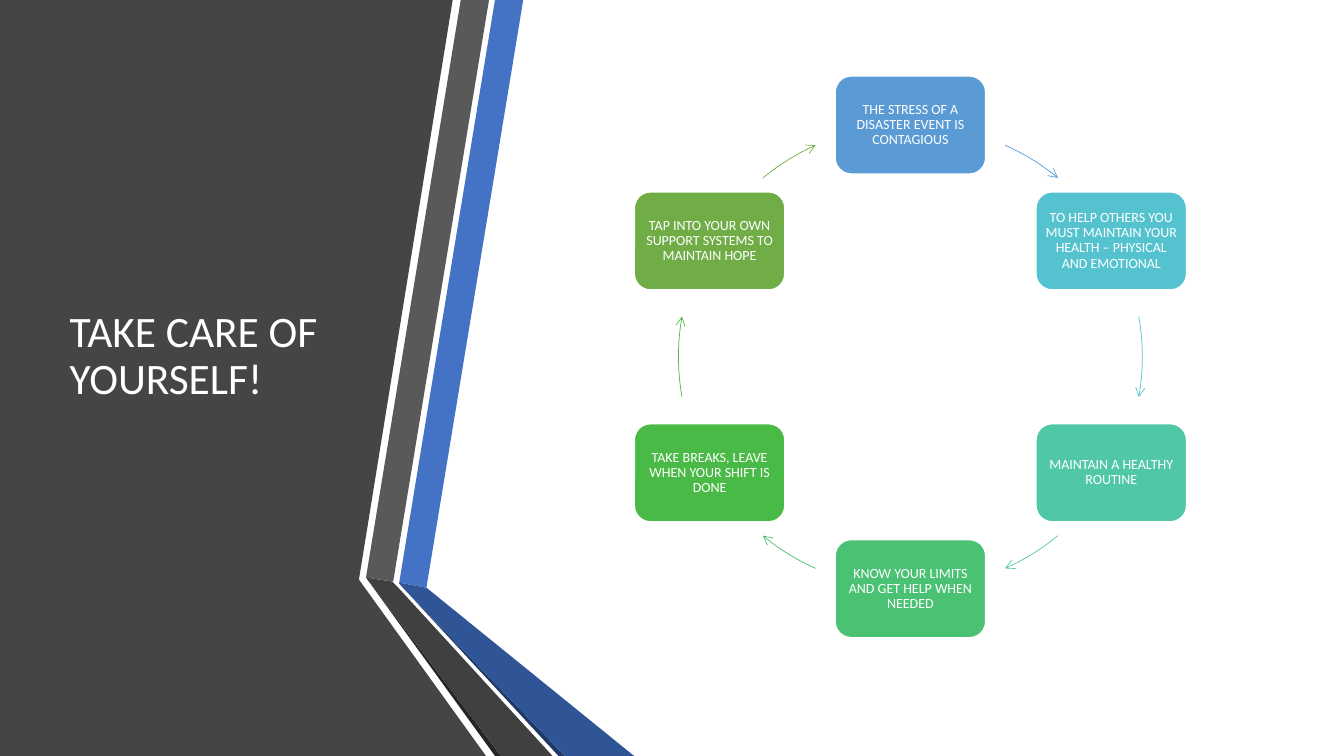
import math
from pptx import Presentation
from pptx import util as u
from pptx.dml.color import RGBColor
from pptx.enum import shapes, text
from pptx.oxml import parse_xml
from pptx.oxml.ns import nsdecls

TITLE = "TAKE CARE OF YOURSELF!"
WHITE = "FFFFFF"

# Fill, then corner points in inches
RIBBONS = [
    ("454545", [(0, 0), (4.49, 0), (3.56, 5.75), (4.82, 7.5), (0, 7.5)]),
    ("4472C4", [(3.96, 5.78), (4.23, 5.83), (5.19, 0), (4.91, 0)]),
    ("595959", [(4.85, 0), (4.57, 0), (3.63, 5.73), (3.9, 5.77)]),
    ("262626", [(3.63, 5.73), (4.91, 7.5), (4.97, 7.5)]),
    ("203864", [(3.96, 5.79), (5.54, 7.5), (5.6, 7.5)]),
    ("2F5597", [(3.96, 5.79), (5.6, 7.5), (6.29, 7.5), (4.23, 5.83), (3.96, 5.78)]),
    ("404040", [(5.48, 7.5), (3.95, 5.83), (3.89, 5.77), (3.63, 5.73), (4.97, 7.5)]),
]

# Text, colour, then start and end angle of the arrow that follows (clockwise from 3 o'clock)
STEPS = [
    ("THE STRESS OF A DISASTER EVENT IS CONTAGIOUS", "5B9BD5", 294.1, 309.5),
    ("TO HELP OTHERS YOU MUST MAINTAIN YOUR HEALTH – PHYSICAL AND EMOTIONAL",
     "55C3CF", 350, 10),
    ("MAINTAIN A HEALTHY ROUTINE", "50C8A7", 50.5, 65.9),
    ("KNOW YOUR LIMITS AND GET HELP WHEN NEEDED", "4BC174", 114.1, 129.5),
    ("TAKE BREAKS, LEAVE WHEN YOUR SHIFT IS DONE", "4ABA46", 170, 190),
    ("TAP INTO YOUR OWN SUPPORT SYSTEMS TO MAINTAIN HOPE", "70AD47", 230.5, 245.9),
]
CENTER_X, CENTER_Y, RADIUS = 9.03, 3.54, 2.3
BOX_W, BOX_H = 1.5, 0.98


def rgb(value):
    return RGBColor.from_string(value)


def inches(*values):
    return [u.Inches(v) for v in values]


def write(sp, words, size, align, inset_x, inset_y, color=WHITE, font="Calibri"):
    tf = sp.text_frame
    tf.word_wrap = True
    tf.auto_size = text.MSO_AUTO_SIZE.NONE
    tf.vertical_anchor = text.MSO_ANCHOR.MIDDLE
    tf.margin_left = tf.margin_right = u.Inches(inset_x)
    tf.margin_top = tf.margin_bottom = u.Inches(inset_y)
    p = tf.paragraphs[0]
    p.alignment = align
    p.line_spacing = 0.9
    r = p.add_run()
    r.text = words
    r.font.size = u.Pt(size)
    r.font.name = font
    r.font.color.rgb = rgb(color)


def add_ribbon(s, color, points):
    corners = [inches(*point) for point in points]
    builder = s.shapes.build_freeform(*corners[0])
    builder.add_line_segments(corners[1:], close=True)
    sp = builder.convert_to_shape()
    sp.shadow.inherit = False
    sp.fill.solid()
    sp.fill.fore_color.rgb = rgb(color)
    sp.line.fill.background()


def add_box(s, words, color, angle):
    left = CENTER_X + RADIUS * math.cos(angle) - BOX_W / 2
    top = CENTER_Y + RADIUS * math.sin(angle) - BOX_H / 2
    sp = s.shapes.add_shape(shapes.MSO_SHAPE.ROUNDED_RECTANGLE,
                            *inches(left, top, BOX_W, BOX_H))
    sp.shadow.inherit = False
    sp.fill.solid()
    sp.fill.fore_color.rgb = rgb(color)
    sp.line.color.rgb = rgb(WHITE)
    sp.line.width = u.Pt(1.5)
    write(sp, words, 10, text.PP_ALIGN.CENTER, 0.04, 0.04)


def add_arc_arrow(s, color, start, end):
    sp = s.shapes.add_shape(
        shapes.MSO_SHAPE.ARC,
        *inches(CENTER_X - RADIUS, CENTER_Y - RADIUS, 2 * RADIUS, 2 * RADIUS))
    # An arc angle is stored in 60000ths of a degree, an adjustment in 100000ths
    sp.adjustments[0] = start * 0.6
    sp.adjustments[1] = end * 0.6
    sp.shadow.inherit = False
    sp.fill.background()
    sp.line.color.rgb = rgb(color)
    sp.line.width = u.Pt(0.5)
    sp.line._get_or_add_ln().append(
        parse_xml(f'<a:tailEnd {nsdecls("a")} type="arrow"/>'))


def main():
    prs = Presentation()
    prs.slide_width, prs.slide_height = inches(13.33, 7.5)
    s = prs.slides.add_slide(prs.slide_layouts[5])

    for color, points in RIBBONS:
        add_ribbon(s, color, points)

    title = s.shapes.title
    title.left, title.top, title.width, title.height = inches(0.59, 0.75, 3.04, 5.58)
    write(title, TITLE, 31, text.PP_ALIGN.LEFT, 0.1, 0.05)
    s.shapes._spTree.append(title._element)  # in front of the dark panel

    for i, (words, color, start, end) in enumerate(STEPS):
        add_box(s, words, color, math.radians(60 * i - 90))
        add_arc_arrow(s, color, start, end)

    prs.save("out.pptx")


if __name__ == "__main__":
    main()
